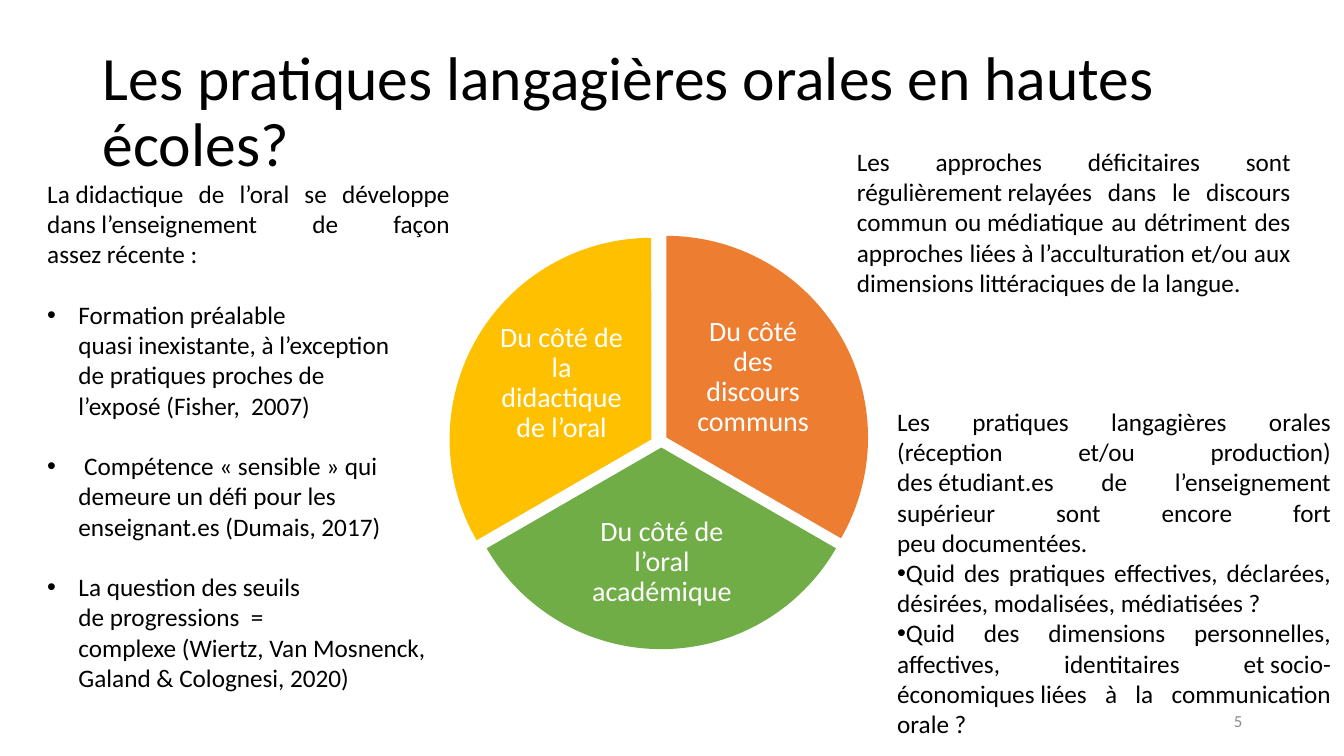
import dataclasses
import typing

import pptx
import pptx.dml.color
import pptx.enum.shapes
import pptx.enum.text
import pptx.util
from lxml import etree
from pptx.oxml.ns import qn

Inches = pptx.util.Inches
Pt = pptx.util.Pt
ALIGN = pptx.enum.text.PP_ALIGN
ANCHOR = pptx.enum.text.MSO_ANCHOR
Box = typing.Tuple[float, float, float, float]

FONT = "Calibri"
BLACK = "000000"
WHITE = "FFFFFF"
SIDE = 4
GAP = 21.6
TIE = "~"
HARD = chr(160)


@dataclasses.dataclass(frozen=True)
class Para:
    text: str
    align: typing.Any = ALIGN.LEFT
    bullet: bool = False
    indent: float = 0
    before: float = 0
    line: float = 1.0


@dataclasses.dataclass(frozen=True)
class Block:
    box: Box
    paras: typing.Tuple[Para, ...]
    size: float = 18
    color: str = BLACK
    anchor: typing.Any = ANCHOR.TOP
    inset: typing.Optional[float] = None


@dataclasses.dataclass(frozen=True)
class Slice:
    left: float
    top: float
    start: int
    color: str
    label: str
    box: Box


def rgb(code: str) -> pptx.dml.color.RGBColor:
    return pptx.dml.color.RGBColor.from_string(code)


def apply(target: typing.Any, values: typing.Dict[str, typing.Any]) -> None:
    for name, value in values.items():
        setattr(target, name, value)


def add_bullet(para: typing.Any, indent: float) -> None:
    props = para._p.get_or_add_pPr()
    props.set("marL", str(Inches(indent)))
    props.set("indent", str(-Inches(indent)))
    etree.SubElement(props, qn("a:buFont")).set("typeface", "Arial")
    etree.SubElement(props, qn("a:buChar")).set("char", "•")


def add_block(slide: typing.Any, block: Block) -> None:
    frame = slide.shapes.add_textbox(*map(Inches, block.box)).text_frame
    apply(frame, {"word_wrap": True, "vertical_anchor": block.anchor})
    if block.inset is not None:
        for side in ("left", "top", "right", "bottom"):
            setattr(frame, f"margin_{side}", Inches(block.inset))
    for index, item in enumerate(block.paras):
        para = frame.add_paragraph() if index else frame.paragraphs[0]
        apply(para, {
            "alignment": item.align,
            "line_spacing": item.line,
            "space_before": Pt(item.before),
        })
        if item.bullet:
            add_bullet(para, item.indent)
        run = para.add_run()
        run.text = item.text.replace(TIE, HARD)
        apply(run.font, {"name": FONT, "size": Pt(block.size)})
        run.font.color.rgb = rgb(block.color)


def add_slice(slide: typing.Any, part: Slice) -> None:
    shape = slide.shapes.add_shape(
        pptx.enum.shapes.MSO_SHAPE.PIE,
        *map(Inches, (part.left, part.top, SIDE, SIDE)),
    )
    for index, angle in enumerate((part.start, (part.start + 120) % 360)):
        shape.adjustments[index] = angle * 0.6
    shape.shadow.inherit = False
    shape.fill.solid()
    shape.fill.fore_color.rgb = rgb(part.color)
    shape.line.fill.background()
    label = Para(part.label, ALIGN.CENTER, line=0.9)
    add_block(slide, Block(part.box, (label,), 20, WHITE, ANCHOR.MIDDLE, 0.03))


def point(text: str) -> Para:
    return Para(text, bullet=True, indent=0.31, before=GAP)


def quid(text: str) -> Para:
    return Para(text, ALIGN.JUSTIFY, bullet=True)


TITLE = Block(
    (0.92, 0.4, 11.5, 1.45),
    (Para("Les pratiques langagières orales en hautes écoles?", line=0.9),),
    44, anchor=ANCHOR.MIDDLE,
)

SLICES = (
    Slice(4.61, 2.34, 270, "ED7D31", "Du côté des discours communs",
          (6.79, 3.08, 1.36, 1.33)),
    Slice(4.56, 2.44, 30, "70AD47", "Du côté de l’oral académique",
          (5.66, 4.96, 1.81, 1.24)),
    Slice(4.46, 2.36, 150, "FFC000", "Du côté de la didactique de l’oral",
          (4.89, 3.14, 1.36, 1.33)),
)

NOTES = (
    Block((9.42, 6.95, 3, 0.4), (Para("5", ALIGN.RIGHT),), 12, "8C8C8C",
          ANCHOR.MIDDLE),
    Block((8.4, 1.4, 4.5, 1.62), (
        Para("Les approches déficitaires sont régulièrement~relayées dans le "
             "discours commun ou~médiatique au détriment des approches "
             "liées~à l’acculturation et/ou aux "
             "dimensions~littéraciques~de la langue.", ALIGN.JUSTIFY),
    )),
    Block((0.37, 1.72, 4.19, 6.16), (
        Para("La~didactique de l’oral se développe dans~l’enseignement de "
             "façon assez~récente :", ALIGN.JUSTIFY),
        point("Formation préalable quasi~inexistante,~à l’exception "
              "de~pratiques proches de l’exposé~(Fisher,  2007)"),
        point("~Compétence~«~sensible~» qui demeure un~défi~pour les "
              "enseignant.es (Dumais, 2017)"),
        point("La question des seuils de~progressions~ = "
              "complexe~(Wiertz,~Van~Mosnenck, Galand &~Colognesi, 2020)"),
    )),
    Block((8.8, 3.98, 4.5, 3.43), (
        Para("Les pratiques langagières orales (réception et/ou production) "
             "des~étudiant.es de l’enseignement supérieur sont encore fort "
             "peu~documentées.", ALIGN.JUSTIFY),
        quid("Quid des pratiques effectives, déclarées, désirées, "
             "modalisées,~médiatisées ?"),
        quid("Quid des dimensions personnelles, affectives, identitaires "
             "et~socio-économiques~liées à la communication orale ?"),
    )),
)


def main() -> None:
    deck = pptx.Presentation()
    apply(deck, {"slide_width": Inches(13.33), "slide_height": Inches(7.5)})
    slide = deck.slides.add_slide(deck.slide_layouts[6])
    add_block(slide, TITLE)
    for part in SLICES:
        add_slice(slide, part)
    for note in NOTES:
        add_block(slide, note)
    deck.save("out.pptx")


if __name__ == "__main__":
    main()
